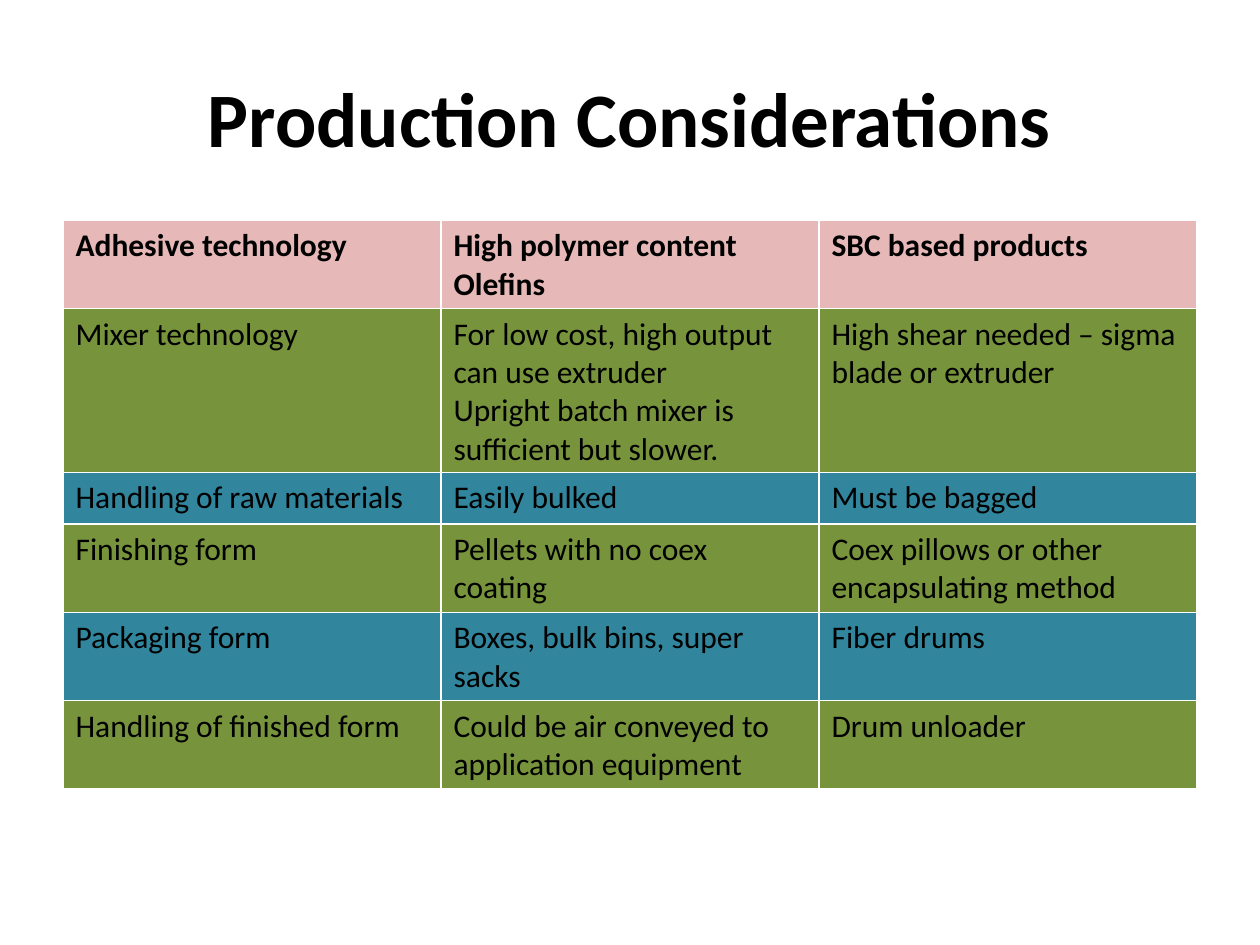
"""Build the Production Considerations slide with its adhesive comparison table."""
from dataclasses import dataclass

import pptx
import pptx.dml.color
import pptx.enum.text
import pptx.util

Inches = pptx.util.Inches

TITLE = "Production Considerations"
HEADINGS = ("Adhesive technology", "High polymer content Olefins", "SBC based products")
CONSIDERATIONS = [
    ("Mixer technology",
     "For low cost, high output can use extruder\nUpright batch mixer is sufficient but slower.",
     "High shear needed – sigma blade or extruder"),
    ("Handling of raw materials", "Easily bulked", "Must be bagged"),
    ("Finishing form", "Pellets with no coex coating", "Coex pillows or other encapsulating method"),
    ("Packaging form", "Boxes, bulk bins, super sacks", "Fiber drums"),
    ("Handling of finished form", "Could be air conveyed to application equipment", "Drum unloader"),
]


@dataclass(frozen=True)
class Theme:
    font: str = "Calibri"
    title_size: int = 44
    body_size: int = 18
    text: str = "000000"
    heading_fill: str = "E6B9B8"
    row_fills: tuple = ("77933C", "31859C")


THEME = Theme()
MARGIN, CONTENT_WIDTH = 0.5, 9
TITLE_TOP, TITLE_HEIGHT = 0.3, 1.25
COMPARISON_TOP, ROW_HEIGHT = 1.75, 0.41


def write(frame, text, size, bold):
    frame.text = text
    for paragraph in frame.paragraphs:
        for run in paragraph.runs:
            run.font.name = THEME.font
            run.font.size = pptx.util.Pt(size)
            run.font.bold = bold
            run.font.color.rgb = pptx.dml.color.RGBColor.from_string(THEME.text)


def add_title(slide):
    title = slide.shapes.add_textbox(
        Inches(MARGIN), Inches(TITLE_TOP), Inches(CONTENT_WIDTH), Inches(TITLE_HEIGHT)).text_frame
    title.word_wrap = True
    title.vertical_anchor = pptx.enum.text.MSO_ANCHOR.MIDDLE
    write(title, TITLE, THEME.title_size, True)
    title.paragraphs[0].alignment = pptx.enum.text.PP_ALIGN.CENTER


def add_comparison(slide):
    rows = [HEADINGS, *CONSIDERATIONS]
    comparison = slide.shapes.add_table(
        len(rows), len(HEADINGS), Inches(MARGIN), Inches(COMPARISON_TOP),
        Inches(CONTENT_WIDTH), Inches(ROW_HEIGHT * len(rows))).table
    for r, entries in enumerate(rows):
        is_heading = r == 0
        fill = THEME.heading_fill if is_heading else THEME.row_fills[(r - 1) % 2]
        for c, entry in enumerate(entries):
            cell = comparison.cell(r, c)
            cell.fill.solid()
            cell.fill.fore_color.rgb = pptx.dml.color.RGBColor.from_string(fill)
            write(cell.text_frame, entry, THEME.body_size, is_heading)


def main():
    deck = pptx.Presentation()
    deck.slide_width, deck.slide_height = Inches(10), Inches(7.5)
    slide = deck.slides.add_slide(deck.slide_layouts[6])
    add_title(slide)
    add_comparison(slide)
    deck.save("out.pptx")


if __name__ == "__main__":
    main()
